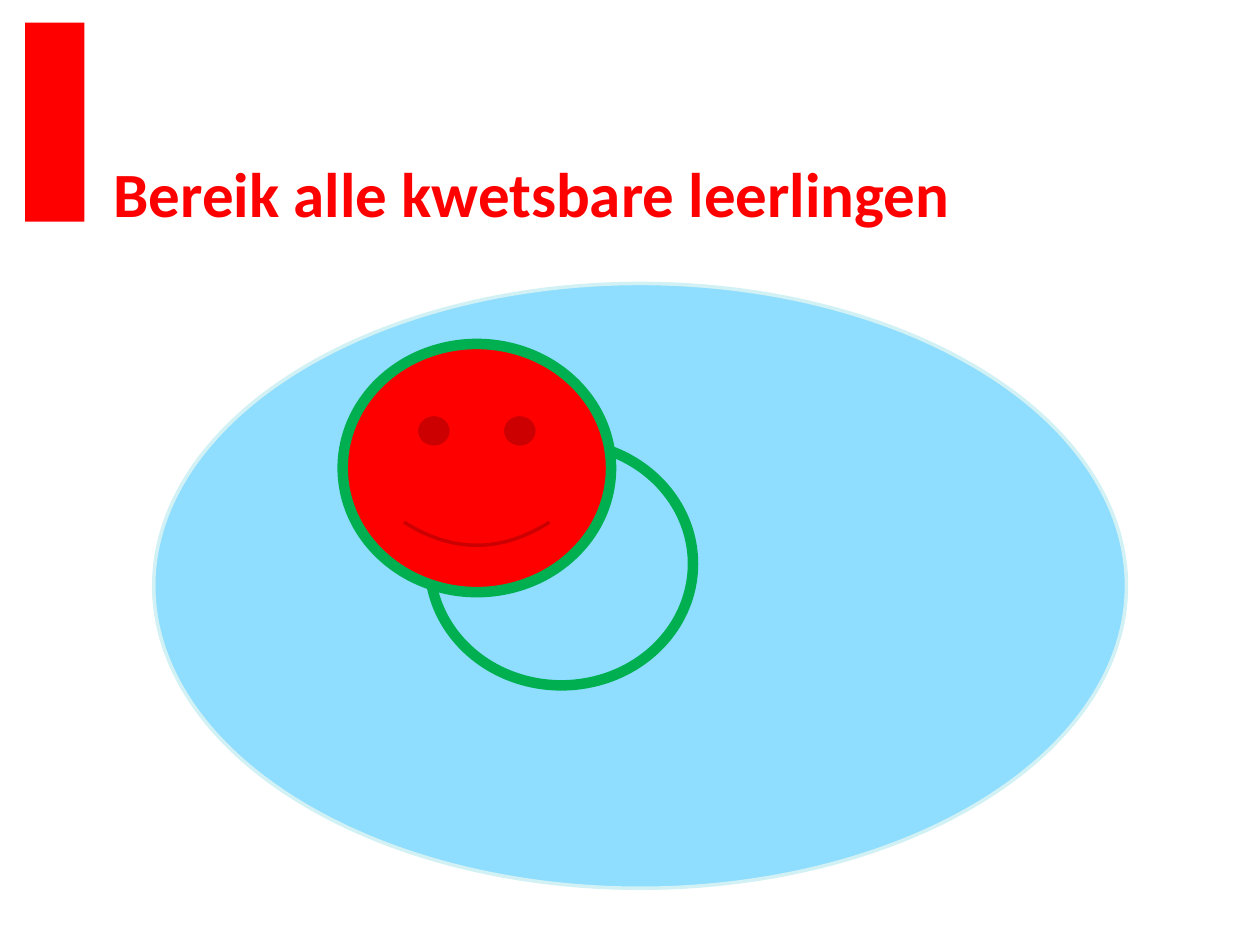
from pptx import Presentation
from pptx.dml.color import RGBColor
from pptx.enum.shapes import MSO_SHAPE
from pptx.enum.text import MSO_ANCHOR, PP_ALIGN
from pptx.util import Inches, Pt

RED = RGBColor(0xFF, 0x00, 0x00)
DARK = RGBColor(0xCC, 0x00, 0x00)
GREEN = RGBColor(0x00, 0xB0, 0x50)
BLUE = RGBColor(0x8F, 0xDD, 0xFF)
PALE = RGBColor(0xD1, 0xF1, 0xF5)

deck = Presentation()
deck.slide_width, deck.slide_height = Inches(10), Inches(7.5)
slide = deck.slides.add_slide(deck.slide_layouts[5])

title = slide.shapes.title
title.left, title.top = Inches(0.9), Inches(1.23)
title.width, title.height = Inches(8.31), Inches(2.2)
frame = title.text_frame
frame.text = "Bereik alle kwetsbare leerlingen"
layout = {"margin_left": 0, "margin_top": 0, "margin_right": 0, "margin_bottom": 0,
          "vertical_anchor": MSO_ANCHOR.TOP, "word_wrap": True}
for name, value in layout.items():
    setattr(frame, name, value)
line = frame.paragraphs[0]
line.alignment = PP_ALIGN.LEFT
for name, value in {"name": "Calibri", "size": Pt(36), "bold": True}.items():
    setattr(line.font, name, value)
line.font.color.rgb = RED

face = (2.72, 2.73, 2.13, 1.97)
shapes = [
    (MSO_SHAPE.RECTANGLE, (0.2, 0.18, 0.47, 1.58), RED, None, 0),
    (MSO_SHAPE.OVAL, (1.22, 2.25, 7.72, 4.8), BLUE, PALE, 2),
    (MSO_SHAPE.OVAL, (3.41, 3.51, 2.09, 1.93), None, GREEN, 6),
    (MSO_SHAPE.SMILEY_FACE, face, RED, DARK, 2),
    (MSO_SHAPE.OVAL, face, None, GREEN, 6),
]
for kind, box, fill, edge, width in shapes:
    shape = slide.shapes.add_shape(kind, *map(Inches, box))
    shape.shadow.inherit = False
    if fill is None:
        shape.fill.background()
    else:
        shape.fill.solid()
        shape.fill.fore_color.rgb = fill
    if edge is None:
        shape.line.fill.background()
    else:
        shape.line.color.rgb = edge
        shape.line.width = Pt(width)

deck.save("out.pptx")
